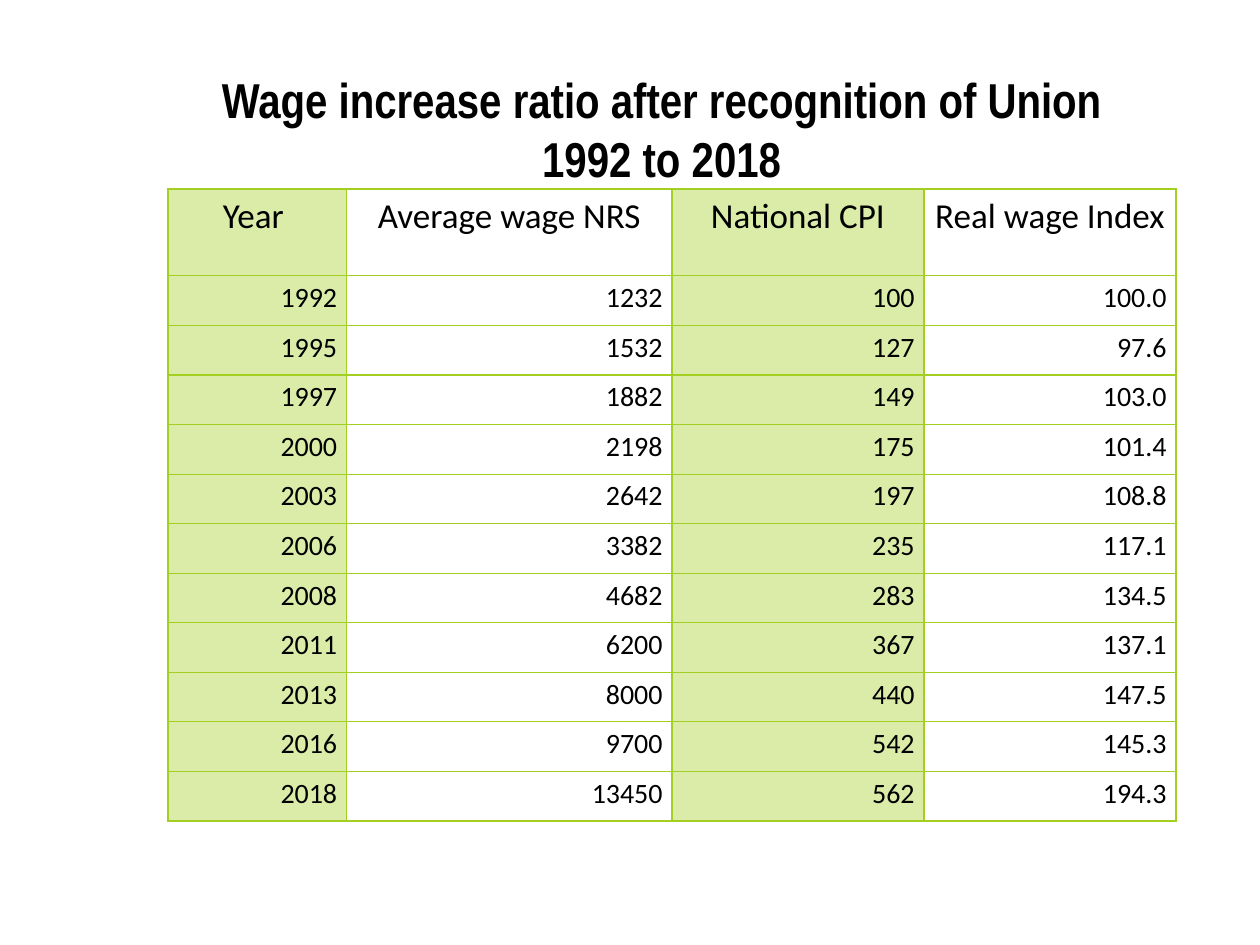
from lxml import etree
from pptx import Presentation
from pptx import util as u
from pptx.dml import color
from pptx.enum import text
from pptx.oxml import ns

BLACK = color.RGBColor(0x00, 0x00, 0x00)
GREEN = color.RGBColor(0xA5, 0xD0, 0x28)
EDGE = color.RGBColor(0xA3, 0xCF, 0x23)
MID = text.PP_ALIGN.CENTER
RIGHT = text.PP_ALIGN.RIGHT

HEADS = ["Year ", "Average wage NRS", "National CPI", "Real wage Index"]
WAGES = [
    ("1992", "1232", "100", "100.0"),
    ("1995", "1532", "127", "97.6"),
    ("1997", "1882", "149", "103.0"),
    ("2000", "2198", "175", "101.4"),
    ("2003", "2642", "197", "108.8"),
    ("2006", "3382", "235", "117.1"),
    ("2008", "4682", "283", "134.5"),
    ("2011", "6200", "367", "137.1"),
    ("2013", "8000", "440", "147.5"),
    ("2016", "9700", "542", "145.3"),
    ("2018", "13450", "562", "194.3"),
]


def write(frame, words, font="Calibri", size=16, bold=False, align=MID, space=None):
    for i, line in enumerate(words.split("\n")):
        para = frame.paragraphs[0] if i == 0 else frame.add_paragraph()
        para.alignment = align
        para.line_spacing = space
        run = para.add_run()
        run.text = line
        run.font.name = font
        run.font.size = u.Pt(size)
        run.font.bold = bold
        run.font.color.rgb = BLACK


class Deck:
    def __init__(self, wide, high):
        self.file = Presentation()
        self.file.slide_width = u.Pt(wide)
        self.file.slide_height = u.Pt(high)
        self.slide = self.file.slides.add_slide(self.file.slide_layouts[6])
        self.edge = 0.75
        self.tint = 40

    def title(self, words, left, top, wide, high):
        box = self.slide.shapes.add_textbox(*map(u.Pt, (left, top, wide, high)))
        frame = box.text_frame
        frame.word_wrap = True
        frame.auto_size = text.MSO_AUTO_SIZE.SHAPE_TO_FIT_TEXT
        frame.margin_left = frame.margin_right = u.Pt(3.6)
        frame.margin_top = frame.margin_bottom = u.Pt(3.6)
        write(frame, words, font="Arial Narrow", size=28, bold=True)

    def border(self, cell):
        props = cell._tc.get_or_add_tcPr()
        for side in ("a:lnL", "a:lnR", "a:lnT", "a:lnB"):
            line = etree.SubElement(props, ns.qn(side), w=str(u.Pt(self.edge)))
            fill = etree.SubElement(line, ns.qn("a:solidFill"))
            etree.SubElement(fill, ns.qn("a:srgbClr"), val=str(EDGE))

    def shade(self, cell):
        cell.fill.solid()
        cell.fill.fore_color.rgb = GREEN
        tone = cell._tc.tcPr.find(".//" + ns.qn("a:solidFill") + "[last()]")
        tone = cell._tc.tcPr.findall(ns.qn("a:solidFill"))[0][0]
        etree.SubElement(tone, ns.qn("a:alpha"), val=str(self.tint * 1000))

    def table(self, rows, left, top, wides, highs):
        size = (left, top, sum(wides), sum(highs))
        grid = self.slide.shapes.add_table(len(rows), len(wides), *map(u.Pt, size)).table
        grid.first_row = grid.horz_banding = False
        for col, wide in zip(grid.columns, wides):
            col.width = u.Pt(wide)
        for r, (row, high) in enumerate(zip(rows, highs)):
            grid.rows[r].height = u.Pt(high)
            look = {"size": 16, "align": RIGHT} if r else {"size": 20, "align": MID}
            for c, words in enumerate(row):
                cell = grid.cell(r, c)
                cell.margin_left = cell.margin_right = u.Pt(5.4)
                cell.margin_top = cell.margin_bottom = 0
                self.border(cell)
                if c % 2:
                    cell.fill.background()
                else:
                    self.shade(cell)
                write(cell.text_frame, words, space=1.15, **look)


def main():
    deck = Deck(720, 540)
    deck.table([HEADS] + WAGES, 96, 108, [102, 186, 144, 144],
               [49.68] + [28.34] * len(WAGES))
    deck.title("Wage increase ratio after recognition of Union\n1992 to 2018",
               48, 36, 660, 87)
    deck.file.save("out.pptx")


if __name__ == "__main__":
    main()
